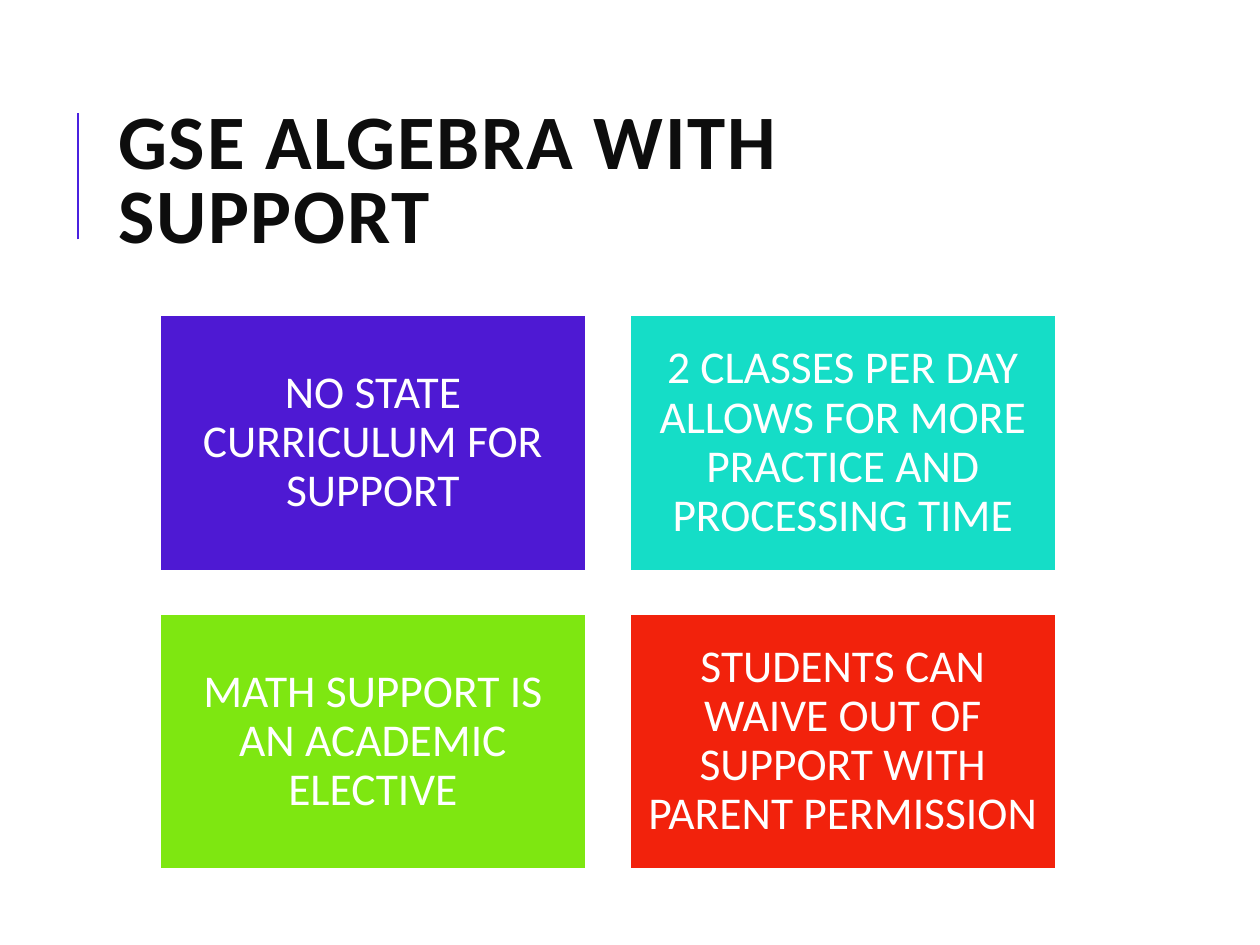
from dataclasses import dataclass

from lxml import etree
from pptx import Presentation
from pptx.dml.color import RGBColor
from pptx.enum.shapes import MSO_CONNECTOR, MSO_SHAPE
from pptx.enum.text import MSO_ANCHOR, PP_ALIGN
from pptx.oxml.ns import qn
from pptx.util import Inches, Pt

RECTANGLE = MSO_SHAPE.RECTANGLE
STRAIGHT = MSO_CONNECTOR.STRAIGHT
MIDDLE = MSO_ANCHOR.MIDDLE
LEFT, CENTER = PP_ALIGN.LEFT, PP_ALIGN.CENTER


@dataclass(frozen=True)
class Theme:
    font: str = "Calibri"
    ink: str = "0D0D0D"
    paper: str = "FFFFFF"
    rule: str = "4A21DF"
    title_size: float = 44
    card_size: float = 26
    rule_width: float = 1.5
    border_width: float = 1.25


@dataclass(frozen=True)
class Grid:
    left: float = 1.27
    top: float = 2.5
    width: float = 3.38
    height: float = 2.03
    column_step: float = 3.73
    row_step: float = 2.37

    def cell(self, column: int, row: int) -> tuple:
        x = self.left + column * self.column_step
        y = self.top + row * self.row_step
        return tuple(Inches(v) for v in (x, y, self.width, self.height))


@dataclass(frozen=True)
class Card:
    column: int
    row: int
    fill: str
    message: str


THEME = Theme()
GRID = Grid()
CARDS = (
    Card(0, 0, "4E19D3", "NO STATE CURRICULUM FOR SUPPORT"),
    Card(1, 0, "15DDC7", "2 CLASSES PER DAY ALLOWS FOR MORE PRACTICE AND PROCESSING TIME"),
    Card(0, 1, "7EE711", "MATH SUPPORT IS AN ACADEMIC ELECTIVE"),
    Card(1, 1, "F2220C", "STUDENTS CAN WAIVE OUT OF SUPPORT WITH PARENT PERMISSION"),
)


def write(frame, text: str, *, size: float, color: str, align=LEFT, bold: bool = False,
          line_spacing: float = 1.0, inset: float = 0.1, tracking: float = 0) -> None:
    frame.word_wrap = True
    frame.vertical_anchor = MIDDLE
    frame.margin_left = frame.margin_right = Inches(inset)
    frame.margin_top = frame.margin_bottom = Inches(min(inset, 0.11))
    paragraph = frame.paragraphs[0]
    paragraph.alignment = align
    paragraph.line_spacing = line_spacing
    run = paragraph.add_run()
    run.text = text
    run.font.name = THEME.font
    run.font.size = Pt(size)
    run.font.bold = bold
    run.font.color.rgb = RGBColor.from_string(color)
    if tracking:
        run.font._element.set("spc", str(round(tracking * 100)))


def draw_title(slide, text: str) -> None:
    heading = slide.shapes.add_textbox(Inches(0.84), Inches(0.64), Inches(7.97), Inches(1.64))
    write(heading.text_frame, text, size=THEME.title_size, color=THEME.ink,
          bold=True, line_spacing=0.8, tracking=1)


def draw_rule(slide, x: float, start: float, end: float) -> None:
    rule = slide.shapes.add_connector(STRAIGHT, Inches(x), Inches(start), Inches(x), Inches(end))
    rule.line.color.rgb = RGBColor.from_string(THEME.rule)
    rule.line.width = Pt(THEME.rule_width)
    etree.SubElement(rule._element.spPr, qn("a:effectLst"))


def draw_card(slide, card: Card) -> None:
    panel = slide.shapes.add_shape(RECTANGLE, *GRID.cell(card.column, card.row))
    panel.shadow.inherit = False
    panel.fill.solid()
    panel.fill.fore_color.rgb = RGBColor.from_string(card.fill)
    panel.line.color.rgb = RGBColor.from_string(THEME.paper)
    panel.line.width = Pt(THEME.border_width)
    write(panel.text_frame, card.message, size=THEME.card_size, color=THEME.paper,
          align=CENTER, line_spacing=0.9, inset=0.11)


def main() -> None:
    deck = Presentation()
    deck.slide_width, deck.slide_height = Inches(10), Inches(7.5)
    slide = deck.slides.add_slide(deck.slide_layouts[6])
    draw_rule(slide, 0.62, 1.9, 0.9)
    draw_title(slide, "GSE ALGEBRA WITH SUPPORT")
    for card in CARDS:
        draw_card(slide, card)
    deck.save("out.pptx")


if __name__ == "__main__":
    main()
